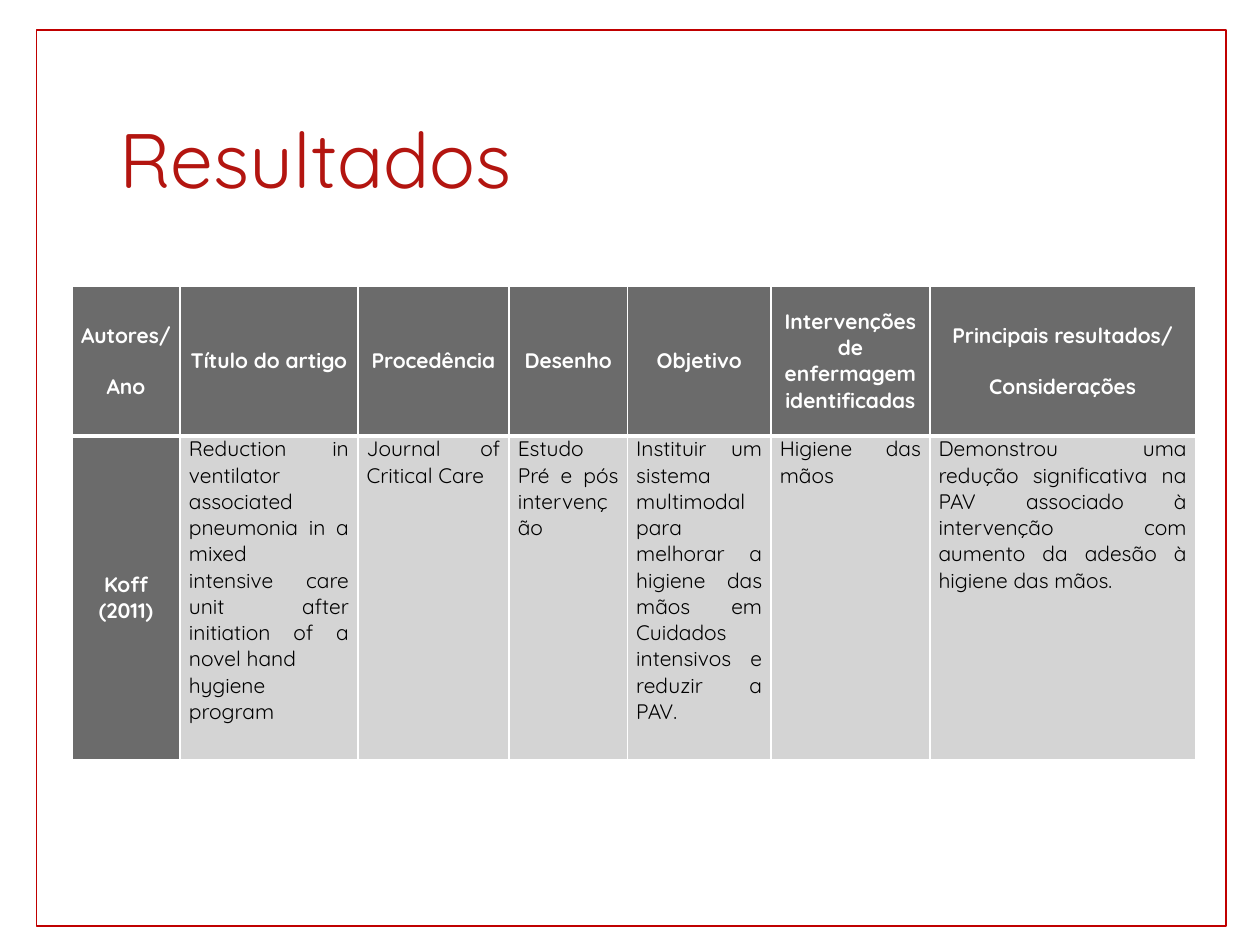
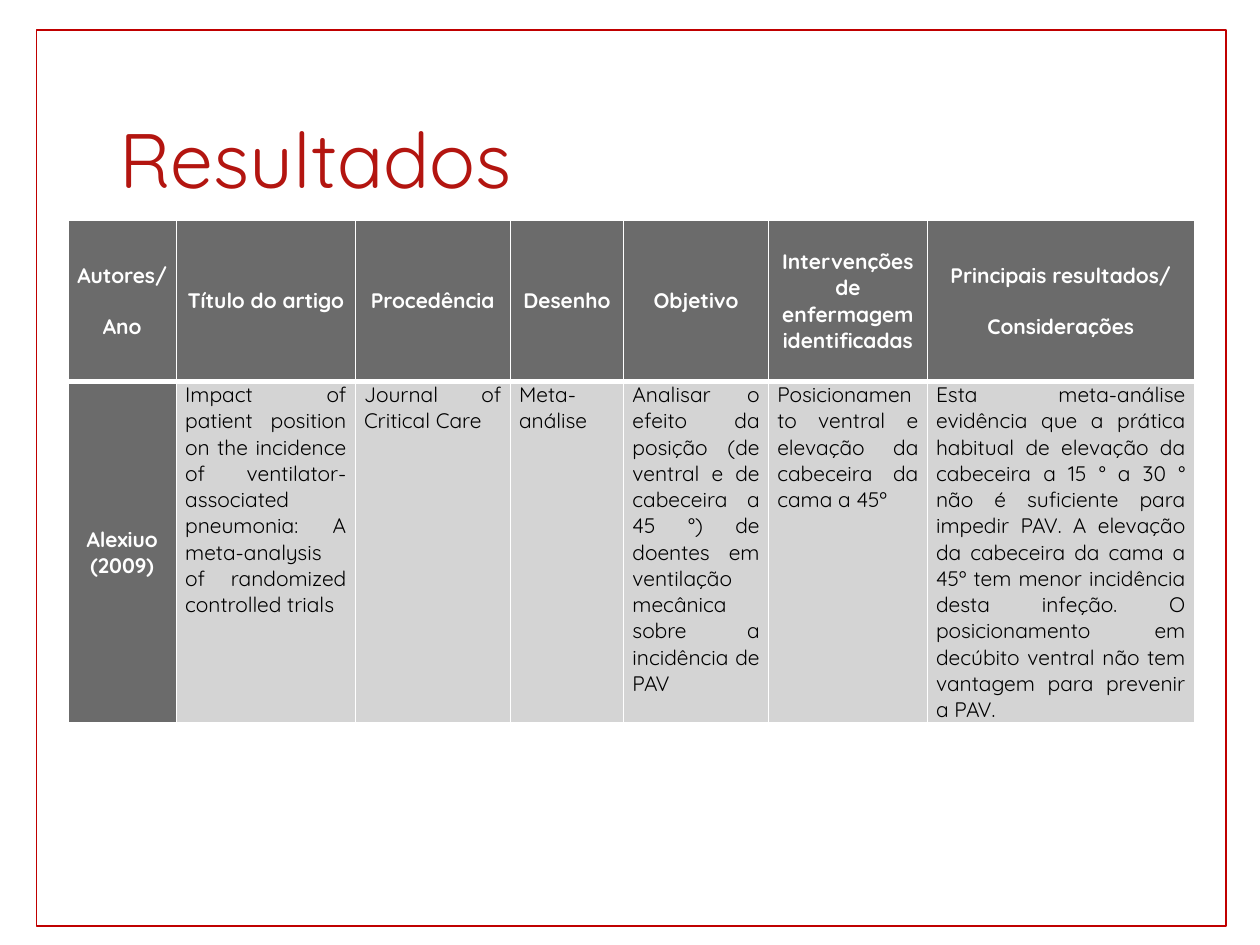
from dataclasses import dataclass

from lxml.etree import SubElement
from pptx import Presentation
from pptx.dml.color import RGBColor
from pptx.enum.shapes import MSO_SHAPE
from pptx.enum.text import MSO_ANCHOR, MSO_AUTO_SIZE, PP_ALIGN
from pptx.oxml.ns import qn
from pptx.util import Inches, Pt


@dataclass(frozen=True)
class Theme:
    font: str = "Quicksand"
    title_size: int = 44
    table_size: int = 12
    title: str = "B31510"
    frame: str = "C00000"
    dark: str = "6B6B6B"
    light: str = "D4D4D4"
    white: str = "FFFFFF"
    black: str = "000000"
    thin_line: int = 1
    thick_line: int = 3


def apply_format(target, values):
    for name, value in values.items():
        setattr(target, name, value)


class SlideBuilder:
    def __init__(self, presentation, theme):
        self.presentation = presentation
        self.theme = theme
        self.slide = None

    def add_slide(self, title):
        layout = self.presentation.slide_layouts.get_by_name("Title Only")
        self.slide = self.presentation.slides.add_slide(layout)
        self.add_frame()
        self.add_title(title)

    def add_frame(self):
        frame = self.slide.shapes.add_shape(
            MSO_SHAPE.RECTANGLE, Inches(0.29), Inches(0.24), Inches(9.44), Inches(7.11))
        frame.shadow.inherit = False
        frame.fill.background()
        frame.line.color.rgb = RGBColor.from_string(self.theme.frame)
        frame.line.width = Pt(self.theme.thin_line)

    def add_title(self, text):
        title = self.slide.shapes.title
        apply_format(title, {"left": Inches(0.85), "top": Inches(0.57),
                             "width": Inches(8.62), "height": Inches(1.45)})
        apply_format(title.text_frame, {"vertical_anchor": MSO_ANCHOR.MIDDLE,
                                        "auto_size": MSO_AUTO_SIZE.NONE,
                                        "word_wrap": True})
        self.set_text(title.text_frame, [text], self.theme.title_size, self.theme.title,
                      {"alignment": PP_ALIGN.LEFT, "line_spacing": 0.9})

    def set_text(self, text_frame, lines, size, color, paragraph_format, bold=False, gap=0):
        text_frame.text = "\n".join(lines)
        for index, paragraph in enumerate(text_frame.paragraphs):
            apply_format(paragraph, paragraph_format)
            paragraph.space_before = Pt(gap if index else 0)
            for run in paragraph.runs:
                apply_format(run.font, {"name": self.theme.font, "size": Pt(size), "bold": bold})
                run.font.color.rgb = RGBColor.from_string(color)

    def add_table(self, left, top, widths, heights, rows):
        table = self.slide.shapes.add_table(
            len(rows), len(widths), Inches(left), Inches(top),
            Inches(sum(widths)), Inches(sum(heights))).table
        table.horz_banding = False
        for column, width in zip(table.columns, widths):
            column.width = Inches(width)
        for row, height in zip(table.rows, heights):
            row.height = Inches(height)
        for row_index, row in enumerate(rows):
            for column_index, lines in enumerate(row):
                self.fill_cell(table.cell(row_index, column_index), lines,
                               is_header=row_index == 0, is_label=column_index == 0)

    def fill_cell(self, cell, lines, is_header, is_label):
        theme = self.theme
        dark = is_header or is_label
        apply_format(cell, {
            "margin_left": Inches(0.07), "margin_right": Inches(0.07),
            "margin_top": 0, "margin_bottom": 0,
            "vertical_anchor": MSO_ANCHOR.MIDDLE if dark else MSO_ANCHOR.TOP})
        self.add_borders(cell, is_header)
        cell.fill.solid()
        cell.fill.fore_color.rgb = RGBColor.from_string(theme.dark if dark else theme.light)
        self.set_text(cell.text_frame, lines, theme.table_size,
                      theme.white if dark else theme.black,
                      {"alignment": PP_ALIGN.CENTER if dark else PP_ALIGN.JUSTIFY},
                      bold=dark, gap=14 if is_header else 0)

    def add_borders(self, cell, is_header):
        # The edge between header and body is the thick one
        thick_edge = "a:lnB" if is_header else "a:lnT"
        properties = cell._tc.get_or_add_tcPr()
        for edge in ("a:lnL", "a:lnR", "a:lnT", "a:lnB"):
            width = self.theme.thick_line if edge == thick_edge else self.theme.thin_line
            line = SubElement(properties, qn(edge), w=str(Pt(width)))
            fill = SubElement(line, qn("a:solidFill"))
            SubElement(fill, qn("a:srgbClr"), val=self.theme.white)


HEADER = [
    ["Autores/", "Ano"], ["Título do artigo"], ["Procedência"], ["Desenho"], ["Objetivo"],
    ["Intervenções de enfermagem identificadas"],
    ["Principais resultados/", "Considerações"],
]

STUDIES = [
    {
        "left": 0.57, "top": 2.27, "heights": [1.19, 2.57],
        "widths": [0.86, 1.41, 1.2, 0.94, 1.14, 1.26, 2.11],
        "cells": [
            ["Koff (2011)"],
            ["Reduction in ventilator associated pneumonia in a mixed",
             "intensive care unit after initiation of a novel hand",
             "hygiene program"],
            ["Journal of Critical Care"],
            ["Estudo Pré e pós intervenção"],
            ["Instituir um sistema multimodal para melhorar a higiene das mãos em "
             "Cuidados intensivos e reduzir a PAV."],
            ["Higiene das mãos"],
            ["Demonstrou uma redução significativa na PAV associado à intervenção "
             "com aumento da adesão à higiene das mãos."],
        ],
    },
    {
        "left": 0.54, "top": 1.75, "heights": [1.28, 2.69],
        "widths": [0.86, 1.42, 1.23, 0.9, 1.15, 1.26, 2.12],
        "cells": [
            ["Alexiuo (2009)"],
            ["Impact of patient position on the incidence of ventilator-associated "
             "pneumonia: A meta-analysis of randomized controlled trials"],
            ["Journal of Critical Care"],
            ["Meta-análise"],
            ["Analisar o efeito da posição (de ventral e de cabeceira a 45 °) de "
             "doentes em ventilação mecânica sobre a incidência de PAV"],
            ["Posicionamento ventral e elevação da cabeceira da cama a 45º"],
            ["Esta meta-análise evidência que a prática habitual de elevação da "
             "cabeceira a 15 ° a 30 ° não é suficiente para impedir PAV. A elevação "
             "da cabeceira da cama a 45º tem menor incidência desta infeção. O "
             "posicionamento em decúbito ventral não tem vantagem para prevenir a PAV."],
        ],
    },
]


def main():
    presentation = Presentation()
    apply_format(presentation, {"slide_width": Inches(10), "slide_height": Inches(7.5)})
    builder = SlideBuilder(presentation, Theme())

    # One results slide per study
    for study in STUDIES:
        builder.add_slide("Resultados")
        builder.add_table(study["left"], study["top"], study["widths"],
                          study["heights"], [HEADER, study["cells"]])

    presentation.save("out.pptx")


if __name__ == "__main__":
    main()
